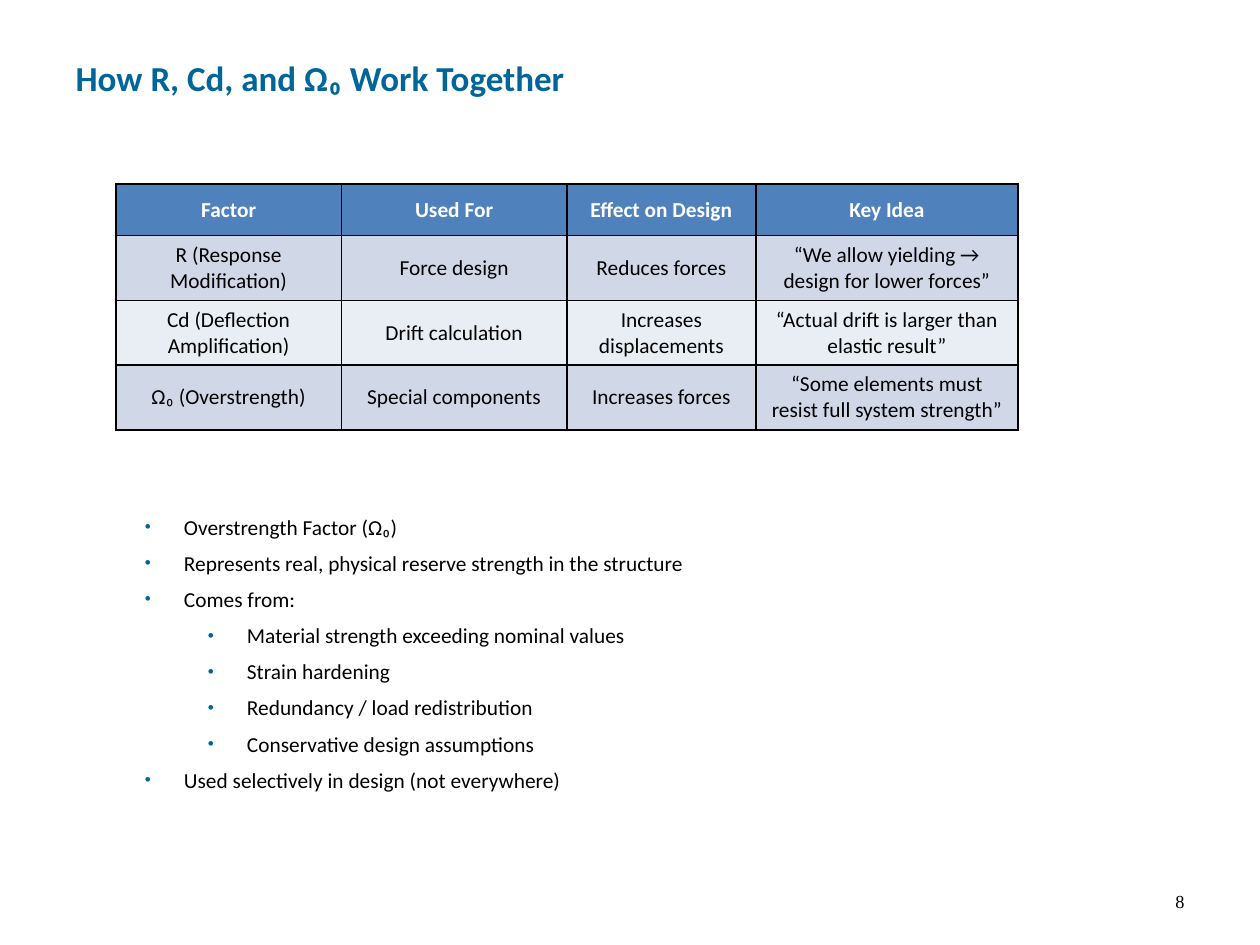
from dataclasses import dataclass

from lxml.etree import SubElement
from pptx import Presentation
from pptx.dml.color import RGBColor
from pptx.enum.text import MSO_ANCHOR as Anchor, MSO_AUTO_SIZE as AutoSize, PP_ALIGN as Align
from pptx.oxml.ns import qn
from pptx.util import Inches, Pt


@dataclass(frozen=True)
class Theme:
    font: str = "Calibri"
    number_font: str = "Times New Roman"
    accent: str = "006699"
    ink: str = "000000"
    number_ink: str = "010000"
    header_ink: str = "FFFFFF"
    header_fill: str = "4F81BD"
    band_fills: tuple = ("D0D8E8", "E9EDF4")
    title_size: float = 20
    body_size: float = 12.2
    number_size: float = 10.5


theme = Theme()


def style_runs(para, size, color, bold=False, font=theme.font):
    for span in para.runs:
        span.font.name = font
        span.font.size = Pt(size)
        span.font.bold = bold
        span.font.color.rgb = RGBColor.from_string(color)


def place(shape, left, top, width, height):
    shape.left, shape.top = Inches(left), Inches(top)
    shape.width, shape.height = Inches(width), Inches(height)


deck = Presentation()
deck.slide_width, deck.slide_height = Inches(10), Inches(7.5)
page = deck.slides.add_slide(deck.slide_layouts[1])

# Title
title = page.shapes.title
place(title, 0.5, 0.4, 6.42, 0.44)
title.text_frame.text = "How R, Cd, and Ω₀ Work Together"
title.text_frame.vertical_anchor = Anchor.TOP
title.text_frame.auto_size = AutoSize.NONE
title_para = title.text_frame.paragraphs[0]
title_para.alignment = Align.LEFT
style_runs(title_para, theme.title_size, theme.accent, bold=True)

# Overstrength list
points = [
    (0, "Overstrength Factor (Ω₀)"),
    (0, "Represents real, physical reserve strength in the structure"),
    (0, "Comes from:"),
    (1, "Material strength exceeding nominal values"),
    (1, "Strain hardening"),
    (1, "Redundancy / load redistribution"),
    (1, "Conservative design assumptions"),
    (0, "Used selectively in design (not everywhere)"),
]
body = page.placeholders[1]
place(body, 1.05, 4.03, 7.28, 2.62)
frame = body.text_frame
frame.auto_size = AutoSize.NONE
frame.vertical_anchor = Anchor.TOP
for index, (level, text) in enumerate(points):
    para = frame.paragraphs[0] if index == 0 else frame.add_paragraph()
    para.text = text
    para.level = level
    props = para._p.get_or_add_pPr()
    props.set("marL", str(Inches(0.31 + 0.5 * level)))
    props.set("indent", str(Inches(-0.31)))
    bullet_color = SubElement(props, qn("a:buClr"))
    SubElement(bullet_color, qn("a:srgbClr"), val=theme.accent)
    SubElement(props, qn("a:buSzPct"), val="80000")
    SubElement(props, qn("a:buChar"), char="•")
    para.space_before = Pt(3 if index else 0)
    para.space_after = Pt(3)
    style_runs(para, theme.body_size, theme.ink)

# Factor table
rows = [
    ("Factor", "Used For", "Effect on Design", "Key Idea"),
    ("R (Response Modification)", "Force design", "Reduces forces",
     "“We allow yielding → design for lower forces”"),
    ("Cd (Deflection Amplification)", "Drift calculation", "Increases displacements",
     "“Actual drift is larger than elastic result”"),
    ("Ω₀ (Overstrength)", "Special components", "Increases forces",
     "“Some elements must resist full system strength”"),
]
column_widths = (1.79, 1.79, 1.5, 2.08)
row_heights = (0.41, 0.51, 0.51, 0.51)
table = page.shapes.add_table(
    len(rows), len(column_widths), Inches(0.92), Inches(1.46),
    Inches(sum(column_widths)), Inches(sum(row_heights))).table
for column, width in zip(table.columns, column_widths):
    column.width = Inches(width)
for row, height in zip(table.rows, row_heights):
    row.height = Inches(height)

for row_index, texts in enumerate(rows):
    is_header = row_index == 0
    fill = theme.header_fill if is_header else theme.band_fills[(row_index - 1) % 2]
    for column_index, text in enumerate(texts):
        cell = table.cell(row_index, column_index)
        cell_props = cell._tc.get_or_add_tcPr()
        for side in "LRTB":
            line = SubElement(cell_props, qn(f"a:ln{side}"), w=str(Pt(1)))
            SubElement(SubElement(line, qn("a:solidFill")), qn("a:srgbClr"), val=theme.ink)
        cell.fill.solid()
        cell.fill.fore_color.rgb = RGBColor.from_string(fill)
        cell.vertical_anchor = Anchor.MIDDLE
        cell.text_frame.text = text
        para = cell.text_frame.paragraphs[0]
        para.alignment = Align.CENTER
        style_runs(para, theme.body_size, theme.header_ink if is_header else theme.ink, is_header)

# Page number
number_box = page.shapes.add_textbox(Inches(7.17), Inches(6.95), Inches(2.33), Inches(0.4))
number_box.text_frame.word_wrap = True
number_box.text_frame.vertical_anchor = Anchor.MIDDLE
number_box.text_frame.text = "8"
number_para = number_box.text_frame.paragraphs[0]
number_para.alignment = Align.RIGHT
style_runs(number_para, theme.number_size, theme.number_ink, font=theme.number_font)

deck.save("out.pptx")
